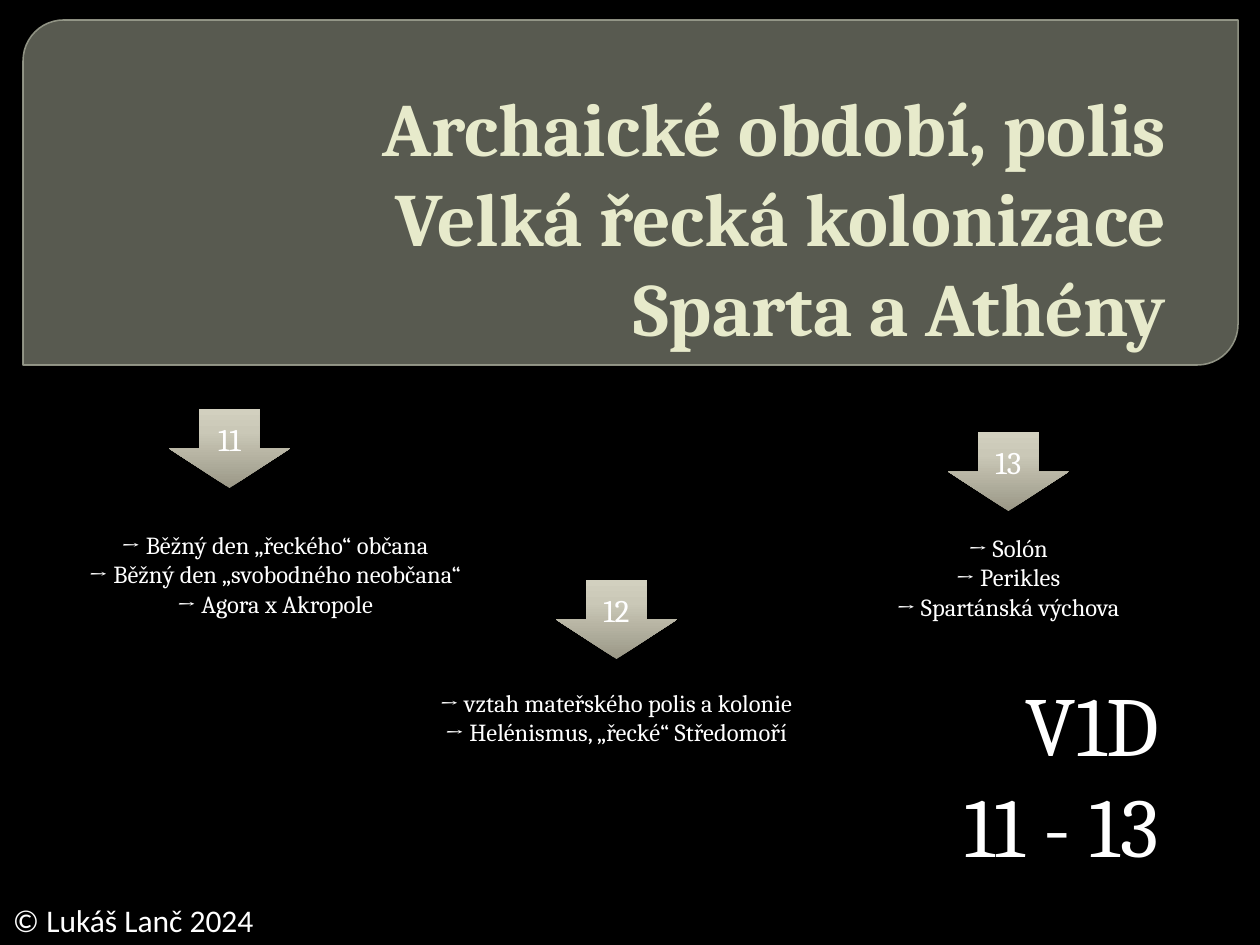
from copy import deepcopy

from lxml import etree
from pptx import Presentation
from pptx.dml.color import RGBColor
from pptx.enum.shapes import MSO_SHAPE
from pptx.enum.text import MSO_ANCHOR, PP_ALIGN
from pptx.oxml.ns import qn
from pptx.util import Emu, Pt

LEFT, CENTER, RIGHT = PP_ALIGN.LEFT, PP_ALIGN.CENTER, PP_ALIGN.RIGHT
TOP, MIDDLE, BOTTOM = MSO_ANCHOR.TOP, MSO_ANCHOR.MIDDLE, MSO_ANCHOR.BOTTOM

BLACK = RGBColor(0x00, 0x00, 0x00)
WHITE = RGBColor(0xFF, 0xFF, 0xFF)
CREAM = RGBColor(0xE7, 0xEA, 0xCB)
PANEL_FILL = RGBColor(0x88, 0x8B, 0x7B)
PANEL_LINE = RGBColor(0x9D, 0xA0, 0x90)
ARROW_STOPS = [
    (0, RGBColor(0x9B, 0x98, 0x87)),
    (0.72, RGBColor(0xCA, 0xC8, 0xB7)),
    (1, RGBColor(0xD2, 0xD0, 0xBF)),
]

# Content: boxes are left, top, width, height in px
PANEL_BOX = (23, 20, 1215, 345)
TITLE = ["Archaické období, polis", "Velká řecká kolonizace", "Sparta a Athény"]
TITLE_BOX = (64, 53, 1134, 305)
CLASS_LINES = ["V1D", "11 - 13"]
CLASS_BOX = (290, 667, 903, 242)
CREDIT = ["© Lukáš Lanč 2024"]
CREDIT_BOX = (0, 895, 323, 50)

# Week number, arrow left and top, topics left and top, topics
WEEKS = [
    ("11", (169, 409), (-6, 524),
     ["Běžný den „řeckého“ občana", "Běžný den „svobodného neobčana“", "Agora x Akropole"]),
    ("12", (556, 580), (335, 682),
     ["vztah mateřského polis a kolonie", "Helénismus, „řecké“ Středomoří"]),
    ("13", (948, 432), (727, 527),
     ["Solón", "Perikles", "Spartánská výchova"]),
]
ARROW_SIZE = (121, 79)
TOPICS_WIDTH, TOPIC_LINE, TOPICS_PADDING = 562, 30, 12


def px(length):
    return Emu(round(length * 914400 / 126))


def write(shape, lines, size, align, anchor=TOP, font="Cambria", color=WHITE,
          bold=False, insets=(13, 6, 13, 6)):
    frame = shape.text_frame
    left, top, right, bottom = map(px, insets)
    frame_format = {"word_wrap": True, "vertical_anchor": anchor, "margin_left": left,
                    "margin_top": top, "margin_right": right, "margin_bottom": bottom}
    for name, value in frame_format.items():
        setattr(frame, name, value)
    frame.text = "\n".join(lines)
    for paragraph in frame.paragraphs:
        paragraph.alignment = align
        for run in paragraph.runs:
            for name, value in {"name": font, "size": Pt(size), "bold": bold}.items():
                setattr(run.font, name, value)
            run.font.color.rgb = color


def add_text(slide, box, lines, size, align, **options):
    write(slide.shapes.add_textbox(*map(px, box)), lines, size, align, **options)


def set_alpha(color_format_parent, percent):
    color = color_format_parent.find(".//" + qn("a:srgbClr"))
    etree.SubElement(color, qn("a:alpha"), val=str(percent * 1000))


def add_panel(slide):
    panel = slide.shapes.add_shape(MSO_SHAPE.ROUND_2_DIAG_RECTANGLE, *map(px, PANEL_BOX))
    panel.shadow.inherit = False
    panel.adjustments[0], panel.adjustments[1] = 0.118, 0
    panel.fill.solid()
    panel.fill.fore_color.rgb = PANEL_FILL
    panel.line.color.rgb = PANEL_LINE
    panel.line.width = Pt(0.87)
    properties = panel._element.spPr
    set_alpha(properties.find(qn("a:solidFill")), 65)
    set_alpha(properties.find(qn("a:ln")), 88)


def add_arrow(slide, position, number):
    arrow = slide.shapes.add_shape(MSO_SHAPE.DOWN_ARROW, *map(px, position + ARROW_SIZE))
    arrow.shadow.inherit = False
    arrow.line.fill.background()
    arrow.fill.gradient()
    arrow.fill.gradient_angle = 90
    # The default gradient has two stops; a third is needed
    stop_list = arrow._element.spPr.find(".//" + qn("a:gsLst"))
    stop_list.append(deepcopy(stop_list[-1]))
    for stop, (position_value, color) in zip(arrow.fill.gradient_stops, ARROW_STOPS):
        stop.position = position_value
        stop.color.rgb = color
    write(arrow, [number], 18, CENTER, anchor=MIDDLE)


def main():
    presentation = Presentation()
    presentation.slide_width, presentation.slide_height = px(1260), px(945)
    slide = presentation.slides.add_slide(presentation.slide_layouts[6])
    slide.background.fill.solid()
    slide.background.fill.fore_color.rgb = BLACK

    # Title panel
    add_panel(slide)
    add_text(slide, TITLE_BOX, TITLE, 43, RIGHT, anchor=BOTTOM, color=CREAM,
             bold=True, insets=(6, 6, 32, 6))

    # Credit and class
    add_text(slide, CREDIT_BOX, CREDIT, 18, LEFT, font="Calibri")
    add_text(slide, CLASS_BOX, CLASS_LINES, 48, RIGHT, insets=(6, 6, 34, 6))

    # Weeks with their topics
    for number, arrow_position, topics_position, topics in WEEKS:
        add_arrow(slide, arrow_position, number)
        height = TOPIC_LINE * len(topics) + TOPICS_PADDING
        add_text(slide, topics_position + (TOPICS_WIDTH, height),
                 [f"→ {topic}" for topic in topics], 14, CENTER)

    presentation.save("out.pptx")


if __name__ == "__main__":
    main()
